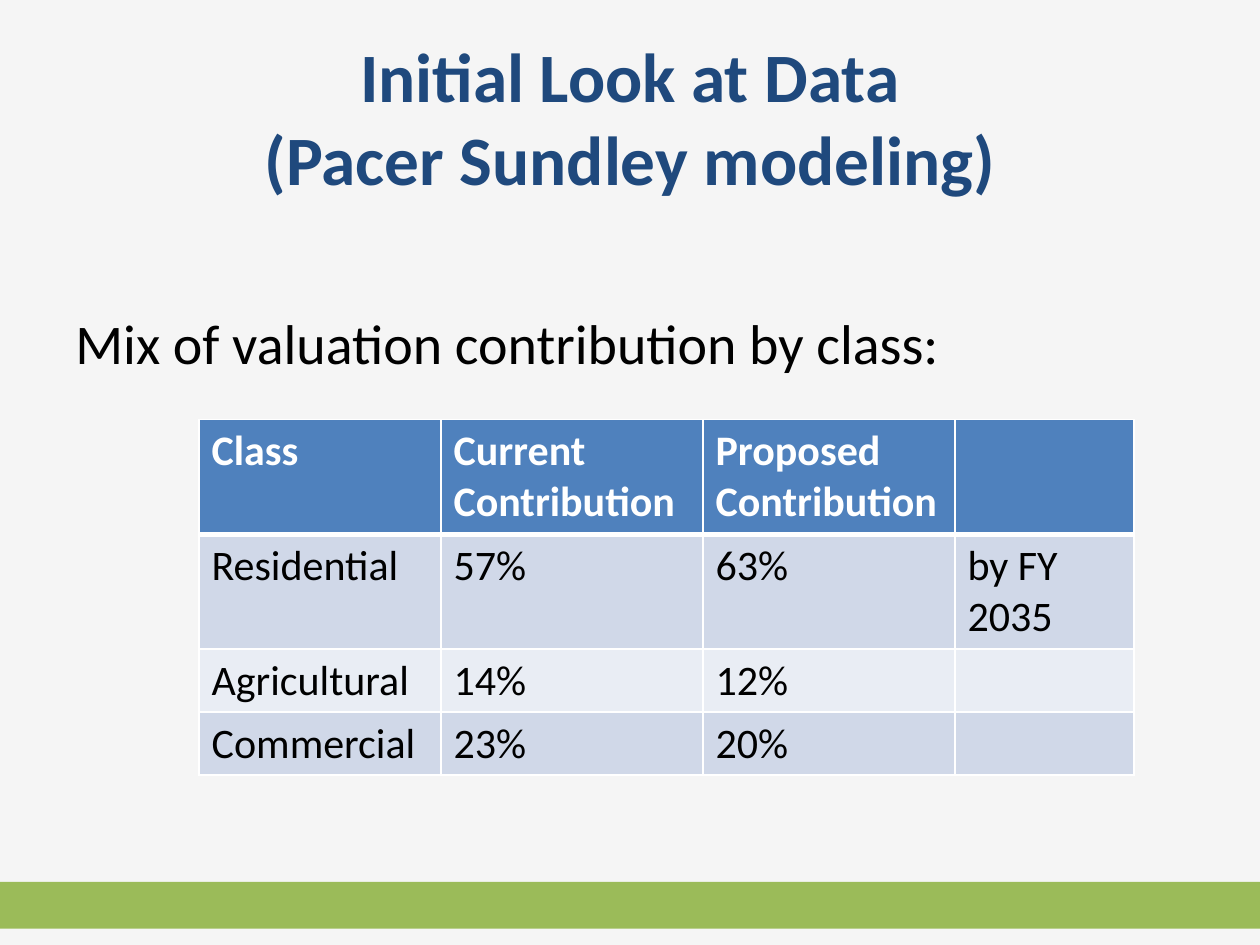
import pptx
import pptx.dml.color
import pptx.enum.shapes
import pptx.enum.text
import pptx.oxml
import pptx.oxml.ns
import pptx.util
from pptx.util import Inches

BACKGROUND, GREEN, NAVY = "F5F5F5", "9BBB59", "1F497D"
BLUE, BAND_DARK, BAND_LIGHT = "4F81BD", "D0D8E8", "E9EDF4"
WHITE, BLACK = "FFFFFF", "000000"

ALIGN = pptx.enum.text.PP_ALIGN
ANCHOR = pptx.enum.text.MSO_ANCHOR


def color(hex_value):
    return pptx.dml.color.RGBColor.from_string(hex_value)


def paint(fill, hex_value):
    fill.solid()
    fill.fore_color.rgb = color(hex_value)


def write(tf, text, size=24, hex_value=BLACK, bold=False, align=ALIGN.LEFT, font="Calibri"):
    """Fill a text frame, one paragraph for each line of text."""
    tf.word_wrap = True
    for i, line in enumerate(text.split("\n")):
        p = tf.paragraphs[0] if i == 0 else tf.add_paragraph()
        p.alignment = align
        r = p.add_run()
        r.text = line
        r.font.name = font
        r.font.size = pptx.util.Pt(size)
        r.font.bold = bold
        r.font.color.rgb = color(hex_value)


def set_borders(cell, hex_value, **widths):
    """Set cell borders; widths in points are keyed by side: L, R, T, B."""
    tc_pr = cell._tc.get_or_add_tcPr()
    for i, (side, width) in enumerate(widths.items()):
        tc_pr.insert(i, pptx.oxml.parse_xml(
            f'<a:ln{side} {pptx.oxml.ns.nsdecls("a")} w="{pptx.util.Pt(width)}">'
            f'<a:solidFill><a:srgbClr val="{hex_value}"/></a:solidFill></a:ln{side}>'))


class Deck:
    """Holds the presentation and the current slide."""

    def __init__(self, width, height):
        self.prs = pptx.Presentation()
        self.prs.slide_width, self.prs.slide_height = Inches(width), Inches(height)
        self.s = None

    def add_slide(self, background):
        self.s = self.prs.slides.add_slide(self.prs.slide_layouts[6])
        paint(self.s.background.fill, background)

    def bar(self, box, hex_value):
        sp = self.s.shapes.add_shape(
            pptx.enum.shapes.MSO_SHAPE.RECTANGLE, *map(Inches, box))
        sp.shadow.inherit = False
        paint(sp.fill, hex_value)
        sp.line.fill.background()

    def text(self, box, text, anchor=ANCHOR.TOP, **style):
        tf = self.s.shapes.add_textbox(*map(Inches, box)).text_frame
        tf.vertical_anchor = anchor
        write(tf, text, **style)

    def table(self, left, top, cols, heights, rows):
        frame = self.s.shapes.add_table(
            len(rows), len(cols), Inches(left), Inches(top),
            Inches(sum(cols)), Inches(sum(heights)))
        table = frame.table
        for column, width in zip(table.columns, cols):
            column.width = Inches(width)
        for i, (values, height) in enumerate(zip(rows, heights)):
            table.rows[i].height = Inches(height)
            header = i == 0
            fill = BLUE if header else BAND_DARK if i % 2 else BAND_LIGHT
            for j, value in enumerate(values):
                cell = table.cell(i, j)
                paint(cell.fill, fill)
                set_borders(cell, WHITE, L=1, R=1,
                            T=3 if i == 1 else 1, B=3 if header else 1)
                if value:
                    write(cell.text_frame, value, bold=header,
                          hex_value=WHITE if header else BLACK)


def main():
    deck = Deck(10, 7.5)
    deck.add_slide(BACKGROUND)
    deck.bar((0, 7, 10, 0.37), GREEN)
    deck.text((0.5, 0.3, 9, 1.25), "Initial Look at Data\n(Pacer Sundley modeling)",
              anchor=ANCHOR.MIDDLE, size=39.6, hex_value=NAVY, bold=True,
              align=ALIGN.CENTER)
    deck.text((0.5, 2.4, 9, 0.7), "Mix of valuation contribution by class:", size=32)
    deck.table(1.58, 3.33, cols=(1.92, 2.08, 2, 1.42), heights=(0.91, 0.91, 0.5, 0.5), rows=(
        ("Class", "Current Contribution", "Proposed Contribution", ""),
        ("Residential", "57%", "63%", "by FY 2035"),
        ("Agricultural", "14%", "12%", ""),
        ("Commercial", "23%", "20%", ""),
    ))
    deck.prs.save("out.pptx")


if __name__ == "__main__":
    main()
